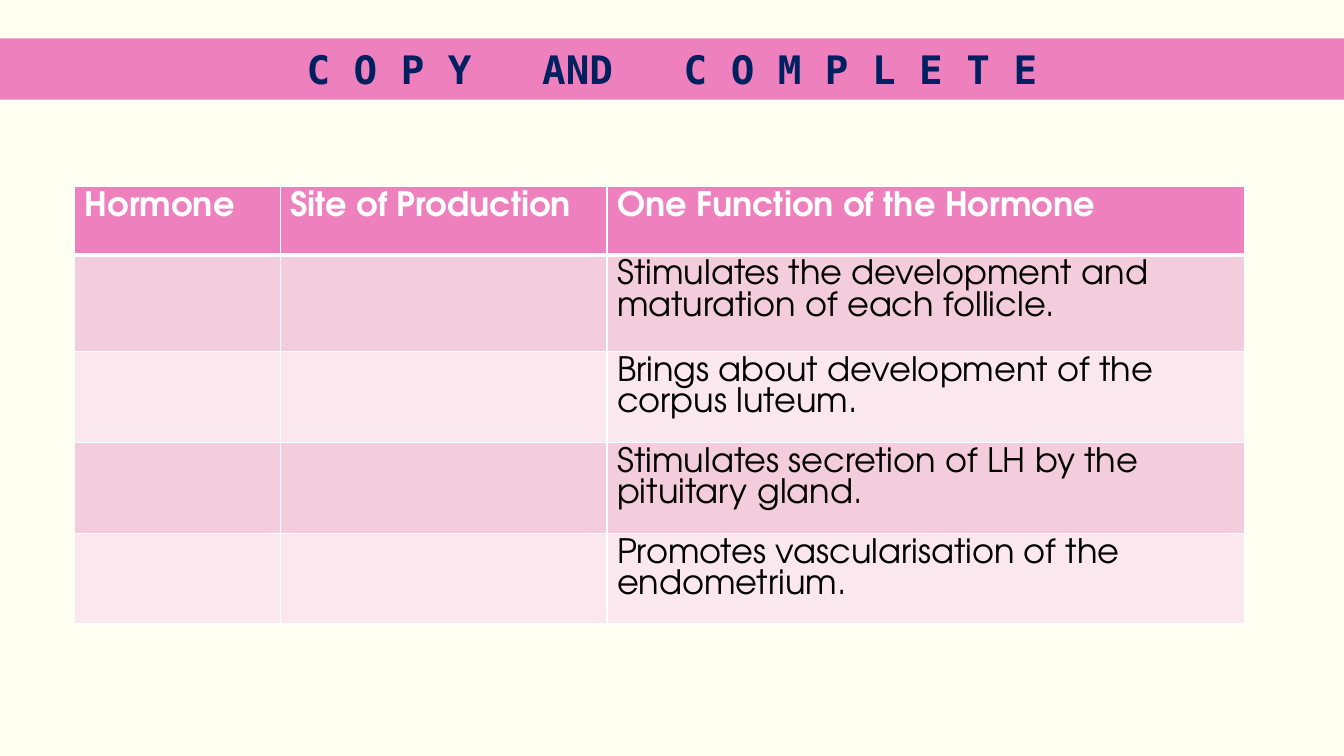
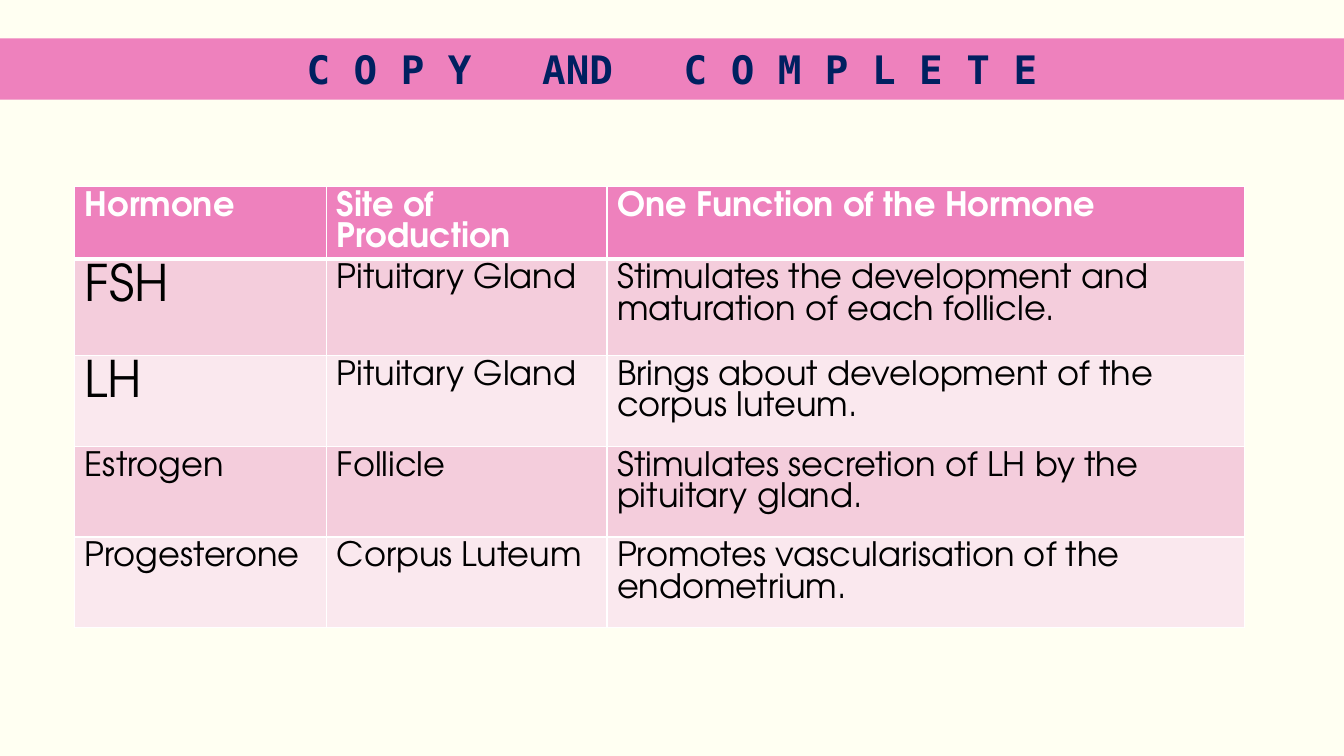
import pptx
import pptx.dml.color
import pptx.enum.shapes
import pptx.enum.text
import pptx.oxml
import pptx.oxml.ns
import pptx.util
from pptx.util import Inches

# Content
TITLE = "C O P Y   AND   C O M P L E T E"
HEADERS = ["Hormone", "Site of Production", "One Function of the Hormone"]
HORMONES = [
    ("FSH", "Pituitary Gland", "Stimulates the development and maturation of each follicle."),
    ("LH", "Pituitary Gland", "Brings about development of the corpus luteum."),
    ("Estrogen", "Follicle", "Stimulates secretion of LH by the pituitary gland."),
    ("Progesterone", "Corpus Luteum", "Promotes vascularisation of the endometrium."),
]
QUESTIONS = [("", "", function) for _, _, function in HORMONES]
SLIDES = [
    {"rows": QUESTIONS, "widths": [2.04, 3.24, 6.32]},
    {"rows": HORMONES, "widths": [2.5, 2.78, 6.32]},
]

# Shared style
COLORS = {"page": "FFFFF2", "pink": "EE81BD", "navy": "002060", "white": "FFFFFF",
          "black": "000000", "odd": "F4CDDC", "even": "FAE8EE"}
TITLE_FONT, BODY_FONT = "DejaVu Sans Mono", "TeX Gyre Adventor"
ROW_HEIGHTS = [0.68, 0.96, 0.9, 0.9, 0.9]
LARGE_TERMS = {"FSH", "LH"}


def set_fill(fill, color):
    fill.solid()
    fill.fore_color.rgb = pptx.dml.color.RGBColor.from_string(COLORS[color])


def write(tf, text, font=BODY_FONT, size=24, color="black", bold=False, align=None):
    p = tf.paragraphs[0]
    p.alignment = align
    r = p.add_run()
    r.text = text
    r.font.name = font
    r.font.size = pptx.util.Pt(size)
    r.font.bold = bold
    set_fill(r.font.fill, color)


def set_borders(cell, **widths):
    """Draw white cell borders; widths are in points, keyed L, R, T, B."""
    tc_pr = cell._tc.get_or_add_tcPr()
    for i, (side, width) in enumerate(widths.items()):
        line = pptx.oxml.parse_xml(
            f'<a:ln{side} {pptx.oxml.ns.nsdecls("a")} w="{pptx.util.Pt(width)}">'
            f'<a:solidFill><a:srgbClr val="{COLORS["white"]}"/></a:solidFill></a:ln{side}>')
        tc_pr.insert(i, line)


def add_title_band(s):
    sp = s.shapes.add_shape(pptx.enum.shapes.MSO_SHAPE.RECTANGLE,
                            0, Inches(0.38), prs.slide_width, Inches(0.61))
    sp.shadow.inherit = False
    set_fill(sp.fill, "pink")
    sp.line.fill.background()
    sp.text_frame.vertical_anchor = pptx.enum.text.MSO_ANCHOR.MIDDLE
    write(sp.text_frame, TITLE, font=TITLE_FONT, size=28, color="navy", bold=True,
          align=pptx.enum.text.PP_ALIGN.CENTER)


def add_hormone_table(s, rows, widths):
    grid = [HEADERS, *rows]
    table = s.shapes.add_table(len(grid), len(widths), Inches(0.74), Inches(1.85),
                               Inches(sum(widths)), Inches(sum(ROW_HEIGHTS))).table
    for column, width in zip(table.columns, widths):
        column.width = Inches(width)
    for i, (row, height) in enumerate(zip(grid, ROW_HEIGHTS)):
        table.rows[i].height = Inches(height)
        header = i == 0
        band = "pink" if header else "odd" if i % 2 else "even"
        for j, text in enumerate(row):
            cell = table.cell(i, j)
            set_fill(cell.fill, band)
            set_borders(cell, L=1, R=1, T=3 if i == 1 else 1, B=3 if header else 1)
            if text:
                write(cell.text_frame, text, size=36 if text in LARGE_TERMS else 24,
                      color="white" if header else "black", bold=header)


# Build the slides
prs = pptx.Presentation()
prs.slide_width, prs.slide_height = Inches(13.33), Inches(7.5)
set_fill(prs.slide_master.background.fill, "page")
for content in SLIDES:
    s = prs.slides.add_slide(prs.slide_layouts[6])
    add_title_band(s)
    add_hormone_table(s, **content)
prs.save("out.pptx")
